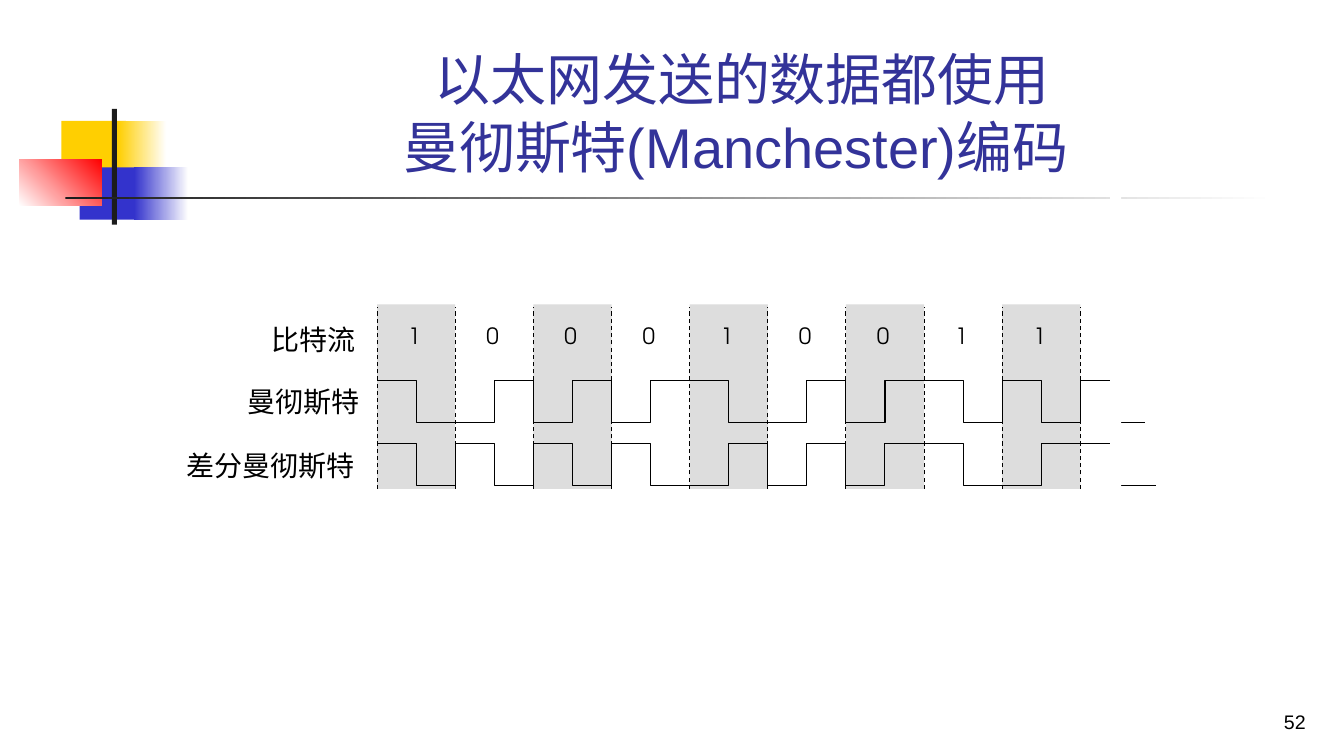
from lxml import etree
from pptx import Presentation
from pptx.dml.color import RGBColor
from pptx.enum.dml import MSO_LINE
from pptx.enum.shapes import MSO_CONNECTOR, MSO_SHAPE
from pptx.enum.text import MSO_ANCHOR, MSO_AUTO_SIZE, PP_ALIGN
from pptx.oxml.ns import qn
from pptx.util import Inches, Pt

RECTANGLE = MSO_SHAPE.RECTANGLE
STRAIGHT = MSO_CONNECTOR.STRAIGHT
DASH = MSO_LINE.DASH
BOTTOM, TOP = MSO_ANCHOR.BOTTOM, MSO_ANCHOR.TOP
LEFT, CENTER, RIGHT = PP_ALIGN.LEFT, PP_ALIGN.CENTER, PP_ALIGN.RIGHT
FIT_SHAPE, FIXED = MSO_AUTO_SIZE.SHAPE_TO_FIT_TEXT, MSO_AUTO_SIZE.NONE

BITS = "100010011"
BIT_LEFT, BIT_WIDTH = 3.74, 0.775
BAND_TOP, BAND_BOTTOM = 3.02, 4.85
SWING = 0.42


def color(hex_text):
    return RGBColor.from_string(hex_text)


def edge(index):
    return BIT_LEFT + index * BIT_WIDTH


def manchester(bits):
    """Half-bit levels: 1 is high then low, 0 is low then high."""
    return [half for bit in bits for half in ((1, 0) if bit == "1" else (0, 1))]


def differential(bits):
    """Half-bit levels: 0 jumps at the bit start, every bit jumps midway."""
    levels, level = [], 1
    for index, bit in enumerate(bits):
        if bit == "0" and index:
            level = 1 - level
        levels += [level, 1 - level]
        level = 1 - level
    return levels


class Page:
    font = "Arial"
    label_font = "Times New Roman"
    digit_font = "TeX Gyre Adventor"
    ink = "000000"
    title_color = "333399"
    line_width = Pt(0.75)

    def __init__(self, deck):
        self.slide = deck.slides.add_slide(deck.slide_layouts[5])
        self.shapes = self.slide.shapes

    def add_span(self, para, text, font, size, hex_text):
        span = para.add_run()
        span.text = text
        span.font.name = font
        span.font.size = Pt(size)
        span.font.color.rgb = color(hex_text)

    def title(self, lines, left, top, width, height):
        box = self.shapes.title
        box.left, box.top = Inches(left), Inches(top)
        box.width, box.height = Inches(width), Inches(height)
        frame = box.text_frame
        frame.auto_size = FIXED
        frame.vertical_anchor = BOTTOM
        para = frame.paragraphs[0]
        para.alignment = CENTER
        for index, line in enumerate(lines):
            if index:
                para.add_line_break()
            self.add_span(para, line, self.font, 40, self.title_color)

    def text(self, text, left, top, width, height, font, size,
             align=LEFT, anchor=TOP, wrap=False):
        box = self.shapes.add_textbox(
            Inches(left), Inches(top), Inches(width), Inches(height))
        frame = box.text_frame
        frame.word_wrap = wrap
        frame.auto_size = FIXED if wrap else FIT_SHAPE
        frame.vertical_anchor = anchor
        para = frame.paragraphs[0]
        para.alignment = align
        self.add_span(para, text, font, size, self.ink)

    def block(self, left, top, width, height, *fills, angle=0):
        """A rectangle; two fills make a gradient."""
        box = self.shapes.add_shape(
            RECTANGLE, Inches(left), Inches(top), Inches(width), Inches(height))
        box.shadow.inherit = False
        box.line.fill.background()
        if len(fills) == 1:
            box.fill.solid()
            box.fill.fore_color.rgb = color(fills[0])
        else:
            box.fill.gradient()
            box.fill.gradient_angle = angle
            for stop, fill in zip(box.fill.gradient_stops, fills):
                stop.color.rgb = color(fill)

    def dashed_line(self, x, top, bottom):
        line = self.shapes.add_connector(
            STRAIGHT, Inches(x), Inches(bottom), Inches(x), Inches(top))
        line.line.color.rgb = color(self.ink)
        line.line.width = self.line_width
        line.line.dash_style = DASH
        etree.SubElement(line._element.spPr, qn("a:effectLst"))

    def wave(self, levels, top, end):
        points = []
        for index, level in enumerate(levels):
            y = top if level else top + SWING
            right = end if index == len(levels) - 1 else edge((index + 1) / 2)
            points += [(edge(index / 2), y), (right, y)]
        points = [(Inches(x), Inches(y)) for x, y in points]
        builder = self.shapes.build_freeform(*points[0], scale=1.0)
        builder.add_line_segments(points[1:], close=False)
        curve = builder.convert_to_shape()
        curve.shadow.inherit = False
        curve.fill.background()
        curve.line.color.rgb = color(self.ink)
        curve.line.width = self.line_width


def main():
    deck = Presentation()
    deck.slide_width, deck.slide_height = Inches(13.33), Inches(7.5)
    page = Page(deck)

    # Corner ornament and rule
    page.block(0.61, 1.2, 0.64, 0.52, "FFCF01")
    page.block(1.17, 1.2, 0.48, 0.52, "FFCF01", "FFFFFF")
    page.block(0.79, 1.66, 0.62, 0.52, "3333CC")
    page.block(1.33, 1.66, 0.54, 0.52, "3333CC", "FFFFFF")
    page.block(0.19, 1.58, 0.82, 0.46, "FFFFFF", "FF0000", angle=45)
    page.block(1.11, 1.08, 0.05, 1.15, "1C1C1C")
    page.block(0.65, 1.95, 12, 0.03, "1C1C1C", "FFFFFF")

    # Title
    page.title(["以太网发送的数据都使用", "曼彻斯特(Manchester)编码 "],
               1.68, 0.23, 11.36, 1.6)

    # Shaded bit columns, digits and bit borders
    for index in range(0, len(BITS), 2):
        page.block(edge(index), BAND_TOP, BIT_WIDTH, BAND_BOTTOM - BAND_TOP, "DDDDDD")
    for index, bit in enumerate(BITS):
        page.text(bit, edge(index) + 0.21, 3.15, 0.33, 0.37, page.digit_font, 16)
    for index in range(len(BITS) + 1):
        page.dashed_line(edge(index), BAND_TOP + 0.03, BAND_BOTTOM)

    # Row labels
    page.text(" 比特流", 2.53, 3.15, 1.11, 0.43, page.label_font, 20)
    page.text("曼彻斯特", 2.36, 3.77, 1.32, 0.43, page.label_font, 20)
    page.text("差分曼彻斯特", 1.74, 4.4, 1.88, 0.43, page.label_font, 20, CENTER)

    # Signals run on into one more bit, broken by a white gap
    page.wave(manchester(BITS + "1"), 3.77, 11.36)
    page.wave(differential(BITS + "1"), 4.4, 11.47)
    page.block(11.01, 1.94, 0.11, 2.92, "FFFFFF")

    # Page number
    page.text("52", 10.27, 6.83, 2.78, 0.5, page.font, 14, RIGHT, BOTTOM, wrap=True)

    deck.save("out.pptx")


if __name__ == "__main__":
    main()
